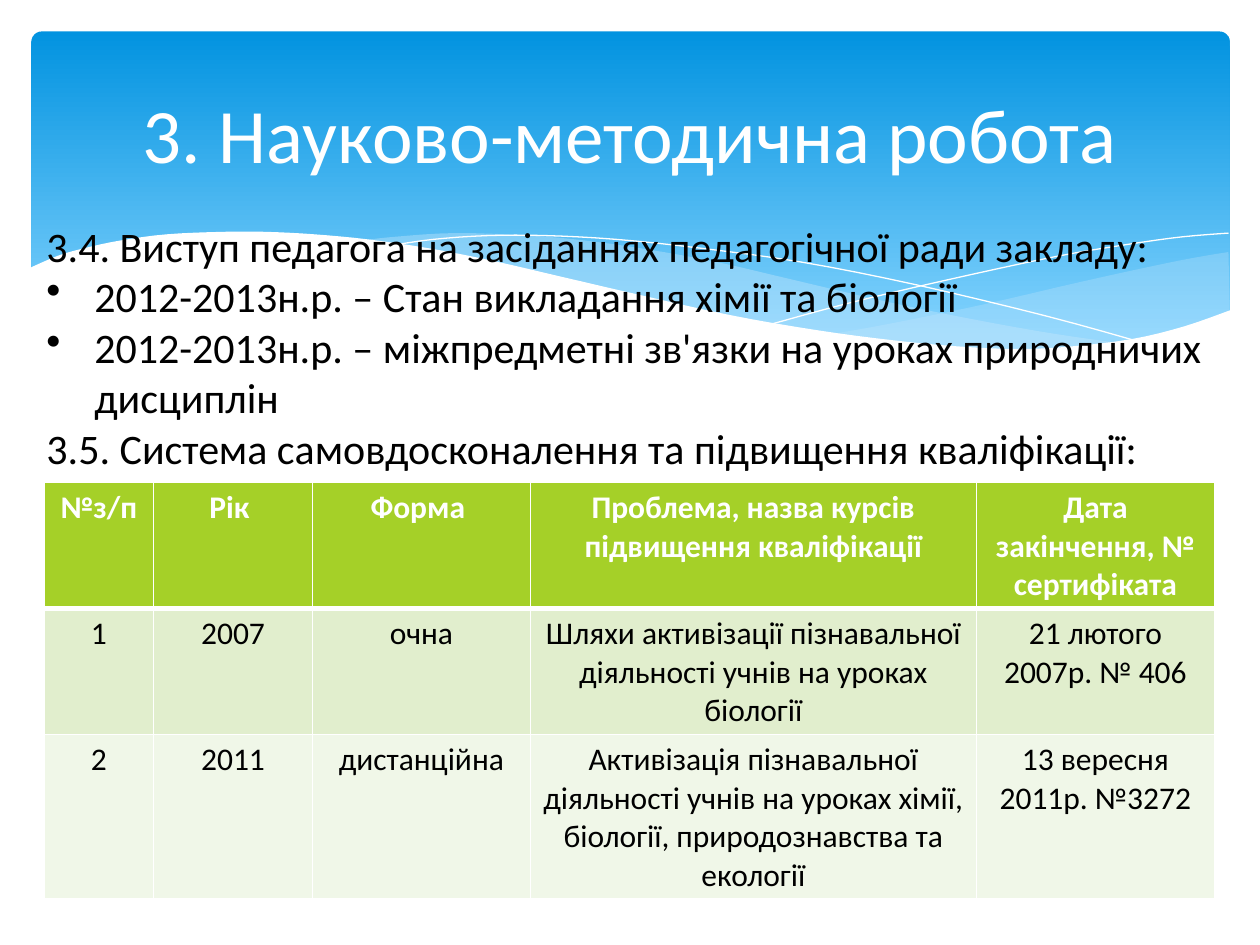
"""Build a slide on teaching methods work: wave banner, talks list and course table."""
from dataclasses import dataclass

from lxml.etree import SubElement
from pptx import Presentation
from pptx.dml.color import RGBColor
from pptx.enum.shapes import MSO_SHAPE
from pptx.enum.text import MSO_ANCHOR, PP_ALIGN
from pptx.oxml import parse_xml
from pptx.oxml.ns import nsdecls, qn
from pptx.util import Emu, Pt

SCALE = 9144
FONT = "Calibri"
STEPS = 4
HUES = {
    "white": "FFFFFF", "black": "000000", "deep": "0293E0", "sky": "83D3FE",
    "mist": "C6E7FC", "lime": "A5D028", "pale": "E1EECD", "faint": "F0F7E8",
}
Dot = tuple[float, float]


@dataclass(frozen=True)
class Wave:
    edges: tuple[tuple[Dot, ...], ...]
    hue: str = "white"
    alpha: int = 100
    solid: bool = True


@dataclass(frozen=True)
class Row:
    cells: tuple[str, ...]
    high: int
    fill: str
    ink: str = "black"
    bold: bool = False
    base: int = 1


@dataclass(frozen=True)
class Item:
    text: str
    bullet: bool = False


WAVES = (
    Wave((
        ((975, 200), (935, 207), (861, 223), (779, 242), (706, 257), (661, 265)),
        ((661, 265), (705, 271), (757, 276), (803, 278), (854, 276), (897, 270),
         (935, 262), (976, 247)),
    ), "mist", 29),
    Wave((
        ((893, 273), (837, 265), (775, 254), (706, 240), (629, 222), (569, 208),
         (514, 198), (465, 191), (420, 187), (361, 185), (313, 188), (286, 191)),
        ((286, 191), (342, 199), (404, 211), (449, 222), (530, 240), (601, 255),
         (665, 266), (722, 274), (773, 277), (818, 278), (857, 277), (893, 273)),
    ), "mist", 40),
    Wave((
        ((309, 195), (344, 190), (387, 187), (433, 187), (489, 190), (556, 197),
         (636, 208), (727, 226), (831, 251), (907, 272)),
    ), solid=False),
    Wave((
        ((613, 257), (672, 241), (748, 223), (836, 204), (895, 194), (938, 188),
         (975, 185)),
    ), solid=False),
    Wave((
        ((977, 246), (940, 259), (899, 269), (850, 275), (809, 277), (761, 275),
         (708, 270), (648, 262), (579, 250), (503, 233), (447, 220), (391, 207),
         (340, 197), (292, 190), (250, 186), (211, 184), (177, 184), (132, 186),
         (95, 191), (67, 197), (46, 203), (23, 213)),
        ((23, 213), (23, 329)), ((23, 329), (977, 329)),
    )),
)

ITEMS = (
    Item("3.4. Виступ педагога на засіданнях педагогічної ради закладу:"),
    Item("2012-2013н.р. – Стан викладання хімії та біології", True),
    Item("2012-2013н.р. – міжпредметні зв'язки на уроках природничих дисциплін", True),
    Item("3.5. Система самовдосконалення та підвищення кваліфікації:"),
)

COLS = (87, 126, 173, 354, 189)
ROWS = (
    Row(("№з/п", "Рік ", "Форма ", "Проблема, назва курсів підвищення кваліфікації",
         "Дата закінчення, № сертифіката"), 100, "lime", "white", True, 3),
    Row(("1", "2007", "очна",
         "Шляхи активізації пізнавальної діяльності учнів на уроках біології",
         "21 лютого 2007р. № 406"), 100, "pale"),
    Row(("2", "2011", "дистанційна",
         "Активізація пізнавальної діяльності учнів на уроках хімії, біології, "
         "природознавства та екології", "13 вересня 2011р. №3272"), 130, "faint"),
)


def px(size: float) -> Emu:
    return Emu(round(size * SCALE))


def rgb(hue: str) -> RGBColor:
    return RGBColor.from_string(HUES[hue])


def style(para, size: int, hue: str, bold: bool = False) -> None:
    font = para.font
    font.name, font.size, font.bold = FONT, Pt(size), bold
    font.color.rgb = rgb(hue)


def smooth(dots: tuple[Dot, ...]) -> list[Dot]:
    if len(dots) == 2:
        return list(dots)
    ring = (dots[0], *dots, dots[-1])
    out = [dots[0]]
    for a, b, c, d in zip(ring, ring[1:], ring[2:], ring[3:]):
        for step in range(1, STEPS + 1):
            t = step / STEPS
            out.append(tuple(
                b[i] + t * (c[i] - a[i]) / 2
                + t * t * (2 * a[i] - 5 * b[i] + 4 * c[i] - d[i]) / 2
                + t ** 3 * (3 * b[i] - a[i] - 3 * c[i] + d[i]) / 2
                for i in (0, 1)))
    return out


def draw_wave(shapes, wave: Wave) -> None:
    dots = [(px(x), px(y)) for edge in wave.edges for x, y in smooth(edge)]
    pen = shapes.build_freeform(*dots[0])
    pen.add_line_segments(dots[1:], close=wave.solid)
    shape = pen.convert_to_shape()
    shape.shadow.inherit = False
    if not wave.solid:
        shape.fill.background()
        shape.line.color.rgb = rgb(wave.hue)
        shape.line.width = Pt(0)
        return
    shape.line.fill.background()
    shape.fill.solid()
    shape.fill.fore_color.rgb = rgb(wave.hue)
    if wave.alpha < 100:
        tint = shape._element.spPr.find(qn("a:solidFill"))[0]
        SubElement(tint, qn("a:alpha"), val=str(wave.alpha * 1000))


def draw_banner(shapes) -> None:
    shape = shapes.add_shape(MSO_SHAPE.ROUNDED_RECTANGLE, px(25), px(25), px(951), px(270))
    shape.adjustments[0] = 0.03
    shape.shadow.inherit = False
    shape.line.fill.background()
    shape.fill.gradient()
    shape.fill.gradient_angle = 270
    stops = zip(shape.fill.gradient_stops, ((0, "deep"), (0.9, "sky")))
    for stop, (place, hue) in stops:
        stop.position = place
        stop.color.rgb = rgb(hue)


def add_box(shapes, left: int, top: int, wide: int, high: int):
    frame = shapes.add_textbox(px(left), px(top), px(wide), px(high)).text_frame
    frame.word_wrap = True
    return frame


def draw_title(shapes) -> None:
    frame = add_box(shapes, 50, 37, 900, 137)
    frame.vertical_anchor = MSO_ANCHOR.MIDDLE
    para = frame.paragraphs[0]
    para.text = "3. Науково-методична робота"
    para.alignment = PP_ALIGN.CENTER
    style(para, 44, "white")


def draw_list(shapes) -> None:
    frame = add_box(shapes, 27, 170, 945, 252)
    for rank, item in enumerate(ITEMS):
        para = frame.add_paragraph() if rank else frame.paragraphs[0]
        para.text = item.text
        style(para, 24, "black")
        if item.bullet:
            props = para._p.get_or_add_pPr()
            props.set("marL", str(px(38)))
            props.set("indent", str(-px(38)))
            mark = parse_xml(f'<a:buChar {nsdecls("a")} char="•"/>')
            props.insert_element_before(mark, "a:tabLst", "a:defRPr", "a:extLst")


def set_edges(cell, widths: dict[str, int]) -> None:
    props = cell._tc.get_or_add_tcPr()
    for rank, (side, width) in enumerate(widths.items()):
        props.insert(rank, parse_xml(
            f'<a:ln{side} {nsdecls("a")} w="{Pt(width)}"><a:solidFill>'
            f'<a:srgbClr val="{HUES["white"]}"/></a:solidFill></a:ln{side}>'))


def draw_table(shapes) -> None:
    high = sum(row.high for row in ROWS)
    table = shapes.add_table(len(ROWS), len(COLS), px(35), px(383), px(sum(COLS)),
                             px(high)).table
    for col, wide in zip(table.columns, COLS):
        col.width = px(wide)
    above = 1
    for line, row in zip(table.rows, ROWS):
        line.height = px(row.high)
        for cell, text in zip(line.cells, row.cells):
            cell.fill.solid()
            cell.fill.fore_color.rgb = rgb(row.fill)
            set_edges(cell, {"L": 1, "R": 1, "T": above, "B": row.base})
            para = cell.text_frame.paragraphs[0]
            para.text = text
            para.alignment = PP_ALIGN.CENTER
            style(para, 18, row.ink, row.bold)
        above = row.base


def main() -> None:
    deck = Presentation()
    deck.slide_width, deck.slide_height = px(1000), px(750)
    shapes = deck.slides.add_slide(deck.slide_layouts[6]).shapes
    draw_banner(shapes)
    for wave in WAVES:
        draw_wave(shapes, wave)
    draw_title(shapes)
    draw_list(shapes)
    draw_table(shapes)
    deck.save("out.pptx")


if __name__ == "__main__":
    main()
